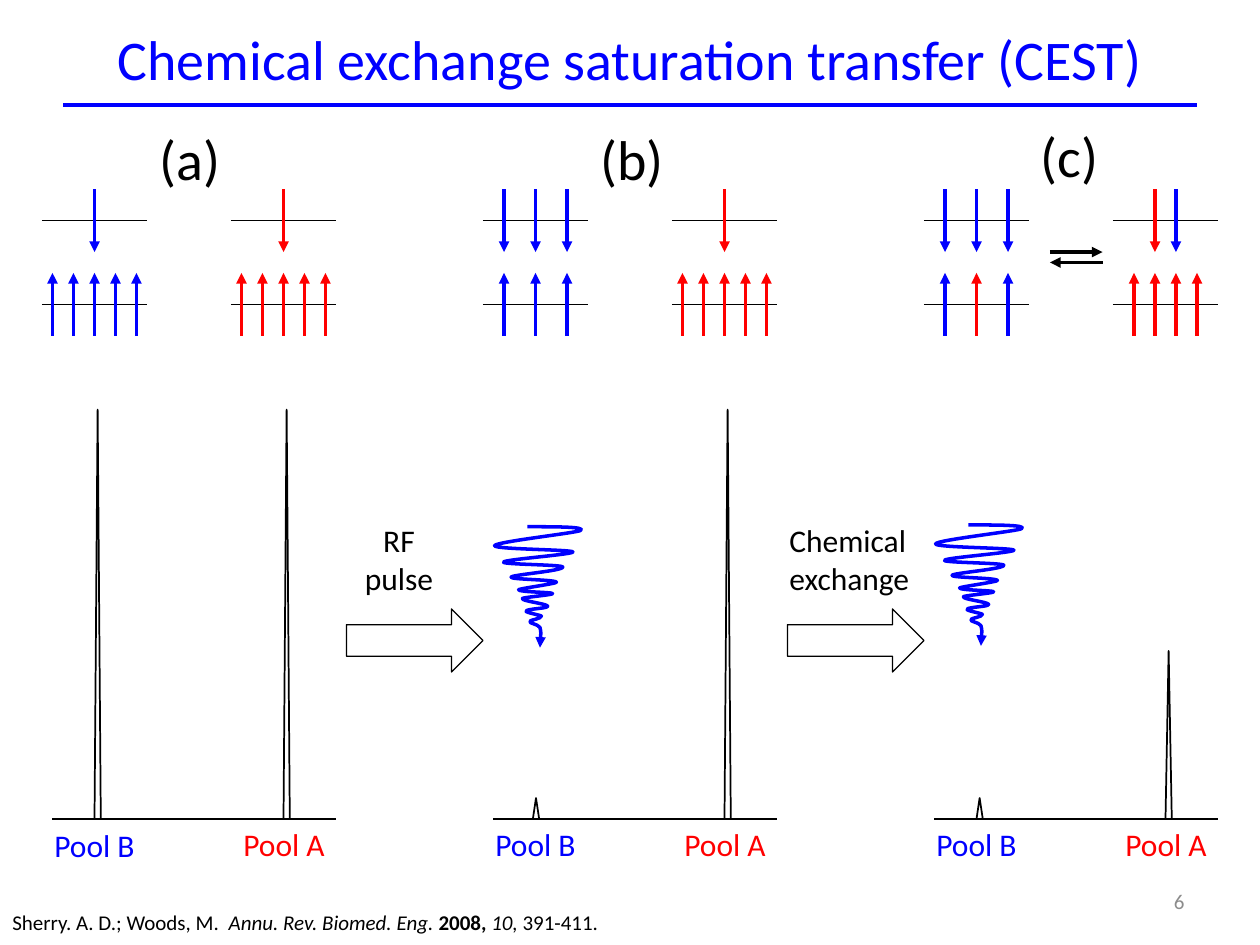
from dataclasses import dataclass
from typing import NamedTuple

from lxml import etree
from pptx import Presentation
from pptx import util as u
from pptx.dml.color import RGBColor as Rgb
from pptx.enum import shapes, text
from pptx.oxml import ns


@dataclass(frozen=True)
class Theme:
    font: str = "Calibri"
    blue: str = "0000FF"
    red: str = "FF0000"
    black: str = "000000"
    gray: str = "8C8C8C"
    head: int = 32
    body: int = 18
    small: int = 12
    thin: float = 1
    thick: float = 2
    edge: float = 0.75


T = Theme()
INK = {"b": T.blue, "r": T.red}


class Run(NamedTuple):
    words: str
    bold: bool = False
    slant: bool = False


class Box(NamedTuple):
    x: float
    y: float
    w: float
    h: float


class Pool(NamedTuple):
    name: str
    mid: float      # centre, from the panel's left edge
    down: str       # one letter per spin: b = blue, r = red
    up: str
    gap: float      # spacing of the spins
    peak: float     # peak height
    left: float     # left edge of the peak
    wide: float     # label width
    drop: float = 0     # label offset below the axis


class Panel(NamedTuple):
    x: float
    mark: Box
    name: str
    pools: tuple[Pool, Pool]


# Layout
STEP = 252
MID_B, MID_A = 54, 162
HIGH, LOW, HALF = 126, 174, 30     # energy levels
SPIN = 18                          # half length of a spin arrow
BASE = 468                         # spectrum axis
PEAK_W = 3.6
TALL = 234

FULL_A = Pool("Pool A", MID_A, "r", "rrrrr", 12, TALL, 162, 72)
EVEN_B = Pool("Pool B", MID_B, "bbb", "bbb", 18, 12, 52.5, 66)
PANELS = (
    Panel(0, Box(84, 67.5, 66, 46), "(a)",
          (Pool("Pool B", MID_B, "b", "bbbbb", 12, TALL, 54, 66, 0.75), FULL_A)),
    Panel(STEP, Box(84, 67.5, 66, 46), "(b)", (EVEN_B, FULL_A)),
    Panel(2 * STEP, Box(83.5, 66, 66, 46), "(c)",
          (EVEN_B._replace(up="brb", left=54, wide=72),
           Pool("Pool A", MID_A, "rb", "rrrr", 12, 96, 162, 72))),
)

# Pulse coil: a start point, then two handles and an end for each curve
COIL = (
    (19.4, 0),
    (36, 0), (53.3, 0), (49.7, 2.2),
    (46.8, 3.6), (1.4, 8.6), (0.7, 10.8),
    (0, 13), (44.6, 13), (45.4, 14.4),
    (46.1, 15.8), (6.5, 18.7), (5.8, 20.2),
    (4.3, 21.6), (38.9, 21.6), (39.6, 23),
    (40.3, 25.2), (10.8, 27.4), (10.1, 28.8),
    (9.4, 30.2), (35.3, 30.2), (36, 31.7),
    (36.7, 32.4), (15.1, 35.3), (14.4, 36),
    (14.4, 37.4), (33.8, 37.4), (33.8, 38.2),
    (34.6, 38.9), (17.3, 40.3), (16.6, 41),
    (15.8, 42.5), (30.2, 43.9), (31, 45.4),
    (31, 46.8), (19.4, 46.8), (18.7, 48.2),
    (18, 49), (26.6, 50.4), (27.4, 51.1),
    (27.4, 52.6), (20.9, 53.3), (20.9, 54),
    (20.2, 55.4), (25.2, 55.4), (26.6, 57.6),
    (27.4, 60.5), (26.6, 69.1), (26.6, 69.1),
)


def add_tip(line) -> None:
    tip = etree.SubElement(line._get_or_add_ln(), ns.qn("a:tailEnd"))
    tip.set("type", "triangle")


def draw_line(page, x1: float, y1: float, x2: float, y2: float,
              ink: str = T.black, width: float = T.thin, tip: bool = False) -> None:
    link = page.shapes.add_connector(
        shapes.MSO_CONNECTOR.STRAIGHT, *map(u.Pt, (x1, y1, x2, y2)))
    link.line.color.rgb = Rgb.from_string(ink)
    link.line.width = u.Pt(width)
    if tip:
        add_tip(link.line)
    etree.SubElement(link._element.spPr, ns.qn("a:effectLst"))


def outline(shape, ink: str, width: float) -> None:
    shape.shadow.inherit = False
    shape.fill.background()
    shape.line.color.rgb = Rgb.from_string(ink)
    shape.line.width = u.Pt(width)


def draw_shape(page, kind, box: Box, width: float) -> None:
    shape = page.shapes.add_shape(kind, *map(u.Pt, box))
    outline(shape, T.black, width)


def write(page, box: Box, lines: list[list[Run]], size: int, ink: str = T.black,
          side=text.PP_ALIGN.LEFT, hold=text.MSO_ANCHOR.TOP) -> None:
    frame = page.shapes.add_textbox(*map(u.Pt, box)).text_frame
    frame.word_wrap = True
    frame.vertical_anchor = hold
    for i, runs in enumerate(lines):
        para = frame.add_paragraph() if i else frame.paragraphs[0]
        para.alignment = side
        for part in runs:
            run = para.add_run()
            run.text = part.words
            run.font.name, run.font.size = T.font, u.Pt(size)
            run.font.bold, run.font.italic = part.bold, part.slant
            run.font.color.rgb = Rgb.from_string(ink)


def draw_spins(page, mid: float, gap: float, inks: str, start: float, end: float) -> None:
    left = mid - gap * (len(inks) - 1) / 2
    for i, key in enumerate(inks):
        x = left + i * gap
        draw_line(page, x, start, x, end, INK[key], T.thick, tip=True)


def draw_pool(page, x: float, pool: Pool) -> None:
    mid = x + pool.mid
    for y in (HIGH, LOW):
        draw_line(page, mid - HALF, y, mid + HALF, y)
    draw_spins(page, mid, pool.gap, pool.down, HIGH - SPIN, HIGH + SPIN)
    draw_spins(page, mid, pool.gap, pool.up, LOW + SPIN, LOW - SPIN)
    draw_shape(page, shapes.MSO_SHAPE.ISOSCELES_TRIANGLE,
               Box(x + pool.left, BASE - pool.peak, PEAK_W, pool.peak), T.thin)
    ink = T.blue if pool.mid == MID_B else T.red
    write(page, Box(mid - HALF, BASE + pool.drop, pool.wide, 29),
          [[Run(pool.name)]], T.body, ink)


def draw_panel(page, panel: Panel) -> None:
    for pool in panel.pools:
        draw_pool(page, panel.x, pool)
    draw_line(page, panel.x + 30, BASE, panel.x + 192, BASE)
    mark = panel.mark._replace(x=panel.x + panel.mark.x)
    write(page, mark, [[Run(panel.name)]], T.head)


def draw_coil(page, x: float, y: float) -> None:
    first, *rest = [(u.Pt(x + dx), u.Pt(y + dy)) for dx, dy in COIL]
    pen = page.shapes.build_freeform(*first)
    pen.add_line_segments(rest, close=False)
    coil = pen.convert_to_shape()
    # Join every three straight segments into one cubic curve
    legs = list(coil._element.iter(ns.qn("a:lnTo")))
    for i in range(0, len(legs), 3):
        curve = etree.SubElement(legs[i].getparent(), ns.qn("a:cubicBezTo"))
        for leg in legs[i:i + 3]:
            curve.append(leg[0])
            leg.getparent().remove(leg)
    outline(coil, T.blue, T.thick)
    add_tip(coil.line)


def main() -> None:
    deck = Presentation()
    deck.slide_width, deck.slide_height = u.Pt(720), u.Pt(540)
    page = deck.slides.add_slide(deck.slide_layouts[6])
    center, middle = text.PP_ALIGN.CENTER, text.MSO_ANCHOR.MIDDLE

    # Title and rule
    write(page, Box(24, 0, 672, 66),
          [[Run("Chemical exchange saturation transfer (CEST)")]],
          T.head, T.blue, center, middle)
    draw_line(page, 36, 60, 684, 60, T.blue, T.thick)

    # Panels
    for panel in PANELS:
        draw_panel(page, panel)

    # Steps between panels
    for x, y in ((282, 301), (534, 300)):
        draw_coil(page, x, y)
    for x in (198, 198 + STEP):
        draw_shape(page, shapes.MSO_SHAPE.RIGHT_ARROW, Box(x, 348, 78, 36), T.edge)
    write(page, Box(180, 294, 96, 51), [[Run("RF")], [Run("pulse")]], T.body, side=center)
    write(page, Box(444, 294, 96, 51), [[Run("Chemical exchange")]], T.body)

    # Exchange arrows
    draw_line(page, 600, 144, 630, 144, width=T.thick, tip=True)
    draw_line(page, 630, 150, 600, 150, width=T.thick, tip=True)

    # Citation and page number
    write(page, Box(0, 516, 354, 22),
          [[Run("Sherry. A. D.; Woods, M.  "), Run("Annu. Rev. Biomed. Eng. ", slant=True),
            Run("2008, ", bold=True), Run("10,", slant=True), Run(" 391-411.")]], T.small)
    write(page, Box(516, 500.5, 168, 29), [[Run("6")]], T.small, T.gray,
          text.PP_ALIGN.RIGHT, middle)

    deck.save("out.pptx")


if __name__ == "__main__":
    main()
